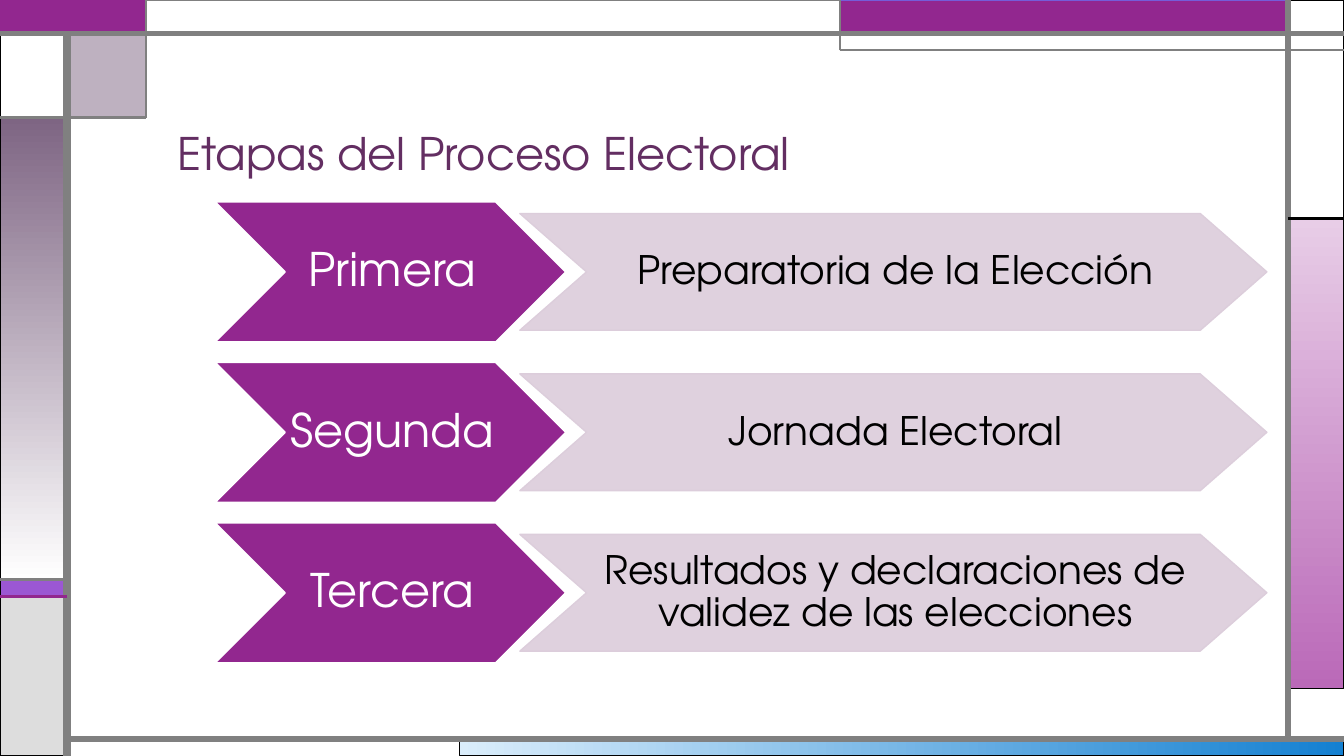
from dataclasses import dataclass
from typing import Optional

from lxml.etree import SubElement
from pptx import Presentation
from pptx.dml.color import RGBColor
from pptx.enum.shapes import MSO_CONNECTOR, MSO_SHAPE
from pptx.enum.text import MSO_ANCHOR, MSO_AUTO_SIZE, PP_ALIGN
from pptx.oxml.ns import qn
from pptx.util import Inches, Pt

# Slide grid: 120 columns by 90 rows
SLIDE_WIDTH, SLIDE_HEIGHT = Inches(13.3333), Inches(7.5)
COLUMNS, ROWS = 120, 90
FONT = "TeX Gyre Adventor"

PURPLE = RGBColor(0x92, 0x27, 0x8F)
PLUM = RGBColor(0x63, 0x2E, 0x62)
MAUVE = RGBColor(0x7E, 0x65, 0x83)
VIOLET = RGBColor(0x9B, 0x57, 0xD3)
INDIGO = RGBColor(0x75, 0x5D, 0xD9)
LILAC = RGBColor(0xDC, 0xCD, 0xDB)
PALE_PINK = RGBColor(0xE8, 0xCD, 0xE7)
ORCHID = RGBColor(0xBA, 0x69, 0xB8)
PALE_BLUE = RGBColor(0xDA, 0xED, 0xFB)
BLUE = RGBColor(0x14, 0x80, 0xD1)
GRAY = RGBColor(0x80, 0x80, 0x80)
LIGHT_GRAY = RGBColor(0xDD, 0xDD, 0xDD)
WHITE = RGBColor(0xFF, 0xFF, 0xFF)
BLACK = RGBColor(0x00, 0x00, 0x00)


@dataclass(frozen=True)
class Panel:
    left: float
    top: float
    right: float
    bottom: float
    color: RGBColor
    end_color: Optional[RGBColor] = None
    angle: int = 0
    opacity: int = 100
    line_color: RGBColor = BLACK
    line_width: float = 0.75


@dataclass(frozen=True)
class Rule:
    start: tuple[float, float]
    end: tuple[float, float]
    width: float
    color: RGBColor = GRAY


@dataclass(frozen=True)
class ChevronStyle:
    left: float
    top: float
    width: float
    height: float
    point: float
    fill: RGBColor
    line: RGBColor
    line_width: float
    opacity: int
    font_size: int
    font_color: RGBColor
    margin_left: float
    margin_right: float


PANELS = [
    Panel(41, 88, 120, 90, PALE_BLUE, BLUE),
    Panel(115, 26, 120, 82, PALE_PINK, ORCHID, 270),
    Panel(0, 69, 6, 71, VIOLET),
    Panel(0, 71, 6, 90, LIGHT_GRAY),
    Panel(115, 0, 120, 26, WHITE),
    Panel(75, 0, 115, 4, PURPLE, line_color=INDIGO),
    Panel(6, 4, 13, 14, MAUVE, opacity=50),
    Panel(0, 14, 6, 69, MAUVE, WHITE, 270),
    Panel(0, 4, 6, 14, WHITE),
    Panel(0, 0, 13, 4, PURPLE, line_color=PURPLE, line_width=1.5),
    Panel(13, 0, 75, 4, WHITE, line_color=GRAY),
]

RULES = [
    Rule((6, 90), (6, 4), 6),
    Rule((6, 88), (120, 88), 4.5),
    Rule((115, 88), (115, 0), 4.5),
    Rule((0, 4), (120, 4), 3),
    Rule((120, 6), (75, 6), 1.5),
    Rule((75, 6), (75, 0), 1.5),
    Rule((115, 26), (120, 26), 2.25, BLACK),
    Rule((13, 0), (13, 14), 1.5),
    Rule((13, 14), (0, 14), 2.25),
    Rule((6, 69), (0, 69), 2.25),
    Rule((6, 71), (0, 71), 2.25, PURPLE),
]

STAGE_STYLE = ChevronStyle(19.15, 24, 31.4, 16.75, 6.28, PURPLE, WHITE, 1.5, 100,
                           33, WHITE, 0.74, 0.7)
DETAIL_STYLE = ChevronStyle(46.42, 25.42, 66.7, 13.9, 5.95, LILAC, LILAC, 1, 90,
                            28, BLACK, 0.62, 0.58)
STAGE_PITCH = 19.1
STAGES = [
    ("Primera", "Preparatoria de la Elección"),
    ("Segunda", "Jornada Electoral"),
    ("Tercera", "Resultados y declaraciones de validez de las elecciones"),
]


def column(number: float) -> int:
    return round(SLIDE_WIDTH * number / COLUMNS)


def row(number: float) -> int:
    return round(SLIDE_HEIGHT * number / ROWS)


def set_opacity(shape, percent: int) -> None:
    """Apply the opacity to the solid fill of the shape."""
    color = shape._element.spPr.find(qn("a:solidFill"))[0]
    SubElement(color, qn("a:alpha")).set("val", str(percent * 1000))


def draw_panel(slide, panel: Panel) -> None:
    shape = slide.shapes.add_shape(
        MSO_SHAPE.RECTANGLE, column(panel.left), row(panel.top),
        column(panel.right - panel.left), row(panel.bottom - panel.top))
    shape.shadow.inherit = False
    if panel.end_color is not None:
        shape.fill.gradient()
        shape.fill.gradient_angle = panel.angle
        for stop, color in zip(shape.fill.gradient_stops, (panel.color, panel.end_color)):
            stop.color.rgb = color
    else:
        shape.fill.solid()
        shape.fill.fore_color.rgb = panel.color
        if panel.opacity < 100:
            set_opacity(shape, panel.opacity)
    shape.line.color.rgb = panel.line_color
    shape.line.width = Pt(panel.line_width)


def draw_rule(slide, rule: Rule) -> None:
    connector = slide.shapes.add_connector(
        MSO_CONNECTOR.STRAIGHT, column(rule.start[0]), row(rule.start[1]),
        column(rule.end[0]), row(rule.end[1]))
    connector.line.color.rgb = rule.color
    connector.line.width = Pt(rule.width)
    SubElement(connector._element.spPr, qn("a:effectLst"))


def format_paragraph(paragraph, size: int, color: RGBColor, alignment: PP_ALIGN) -> None:
    paragraph.alignment = alignment
    paragraph.line_spacing = 0.9
    for run in paragraph.runs:
        run.font.name = FONT
        run.font.size = Pt(size)
        run.font.color.rgb = color


def draw_chevron(slide, style: ChevronStyle, offset: float, text: str) -> None:
    left, right = style.left, style.left + style.width
    top = style.top + offset
    middle, bottom = top + style.height / 2, top + style.height
    corners = [(right - style.point, top), (right, middle), (right - style.point, bottom),
               (left, bottom), (left + style.point, middle)]
    builder = slide.shapes.build_freeform(column(left), row(top))
    builder.add_line_segments([(column(x), row(y)) for x, y in corners], close=True)
    shape = builder.convert_to_shape()
    shape.shadow.inherit = False
    shape.fill.solid()
    shape.fill.fore_color.rgb = style.fill
    if style.opacity < 100:
        set_opacity(shape, style.opacity)
    shape.line.color.rgb = style.line
    shape.line.width = Pt(style.line_width)

    text_frame = shape.text_frame
    text_frame.text = text
    text_frame.word_wrap = True
    text_frame.vertical_anchor = MSO_ANCHOR.MIDDLE
    text_frame.margin_left = Inches(style.margin_left)
    text_frame.margin_right = Inches(style.margin_right)
    text_frame.margin_top = text_frame.margin_bottom = Inches(0.02)
    format_paragraph(text_frame.paragraphs[0], style.font_size, style.font_color,
                     PP_ALIGN.CENTER)


def main() -> None:
    presentation = Presentation()
    presentation.slide_width, presentation.slide_height = SLIDE_WIDTH, SLIDE_HEIGHT
    slide = presentation.slides.add_slide(presentation.slide_layouts[5])

    # Frame around the slide
    for panel in PANELS:
        draw_panel(slide, panel)
    for rule in RULES:
        draw_rule(slide, rule)

    # Title
    title = slide.shapes.title
    title.left, title.top, title.width, title.height = column(14.95), row(7), column(94.5), row(15)
    title.text_frame.text = "Etapas del Proceso Electoral"
    title.text_frame.auto_size = MSO_AUTO_SIZE.NONE
    title.text_frame.vertical_anchor = MSO_ANCHOR.BOTTOM
    format_paragraph(title.text_frame.paragraphs[0], 32, PLUM, PP_ALIGN.LEFT)

    # One pair of chevrons per stage
    for index, (stage, detail) in enumerate(STAGES):
        draw_chevron(slide, STAGE_STYLE, index * STAGE_PITCH, stage)
        draw_chevron(slide, DETAIL_STYLE, index * STAGE_PITCH, detail)

    presentation.save("out.pptx")


if __name__ == "__main__":
    main()
